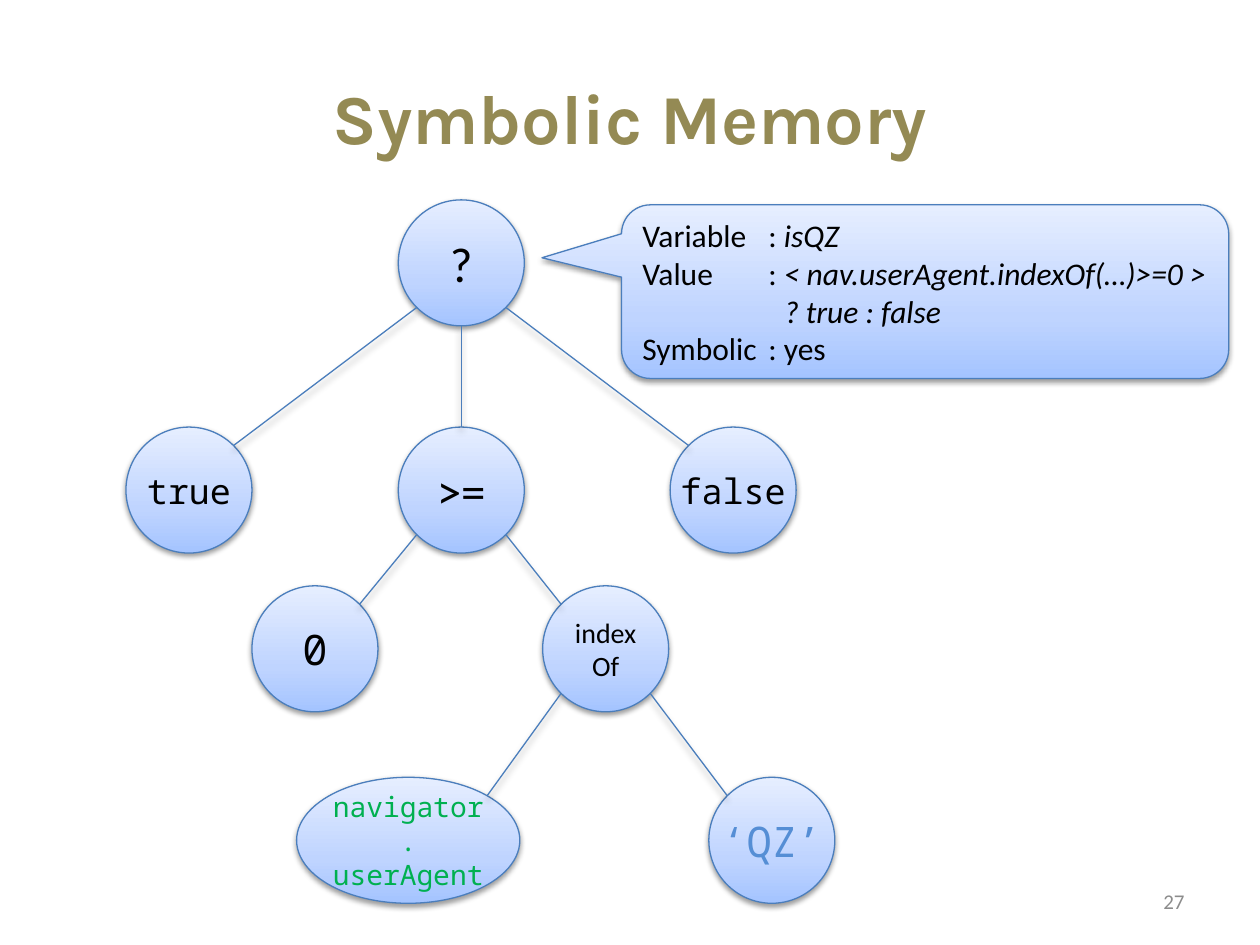
from copy import deepcopy
from lxml import etree
from pptx import Presentation
from pptx.dml.color import RGBColor
from pptx.enum.shapes import MSO_CONNECTOR, MSO_SHAPE as SHAPE
from pptx.enum.text import MSO_ANCHOR as ANCHOR, PP_ALIGN as ALIGN
from pptx.oxml.ns import qn
from pptx.util import Cm, Pt

SANS, MONO = "Calibri", "Noto Sans Mono"
LINE, BLACK = "4B7EBC", "000000"
GRADIENT = [(0, "A4C4FF"), (0.35, "BFD4FF"), (1, "E6EEFF")]
SIZE = 2.54  # node height, cm

# name: (text, centre x, centre y, width, font, size, colour, wrap)
NODES = {
    "cond": ("?", 9.3, 5.3, SIZE, SANS, 28, BLACK, True),
    "true": ("true", 3.81, 9.88, SIZE, MONO, 20, BLACK, False),
    "compare": (">=", 9.3, 9.88, SIZE, SANS, 28, BLACK, True),
    "false": ("false", 14.78, 9.88, SIZE, MONO, 20, BLACK, False),
    "zero": ("0", 6.35, 13.08, SIZE, MONO, 24, BLACK, True),
    "index": ("indexOf", 12.21, 13.08, SIZE, SANS, 16, BLACK, True),
    "agent": ("navigator.\nuserAgent", 8.23, 16.94, 4.5, MONO, 16, "00B050", True),
    "browser": ("‘QZ’", 15.56, 16.94, SIZE, MONO, 24, "558ED5", False),
}
CHILDREN = {
    "cond": ["true", "compare", "false"],
    "compare": ["zero", "index"],
    "index": ["agent", "browser"],
}
# each line: plain text, italic text
DETAILS = [
    ("Variable\t: ", "isQZ"),
    ("Value\t: ", "< nav.userAgent.indexOf(…)>=0 >"),
    ("", "? true : false"),
    ("Symbolic\t: yes", ""),
]


def rgb(value):
    return RGBColor.from_string(value)


def style(r, font, size, color, bold=None, italic=None):
    f = r.font
    f.name, f.size, f.bold, f.italic = font, Pt(size), bold, italic
    f.color.rgb = rgb(color)


def add_shadow(sp, blur, dist, alpha):
    sp_pr = sp._element.spPr
    effects = etree.SubElement(sp_pr, qn("a:effectLst"))
    shadow = etree.SubElement(effects, qn("a:outerShdw"), blurRad=str(Pt(blur)),
                              dist=str(Pt(dist)), dir="5400000", rotWithShape="0")
    color = etree.SubElement(shadow, qn("a:srgbClr"), val=BLACK)
    etree.SubElement(color, qn("a:alpha"), val=str(alpha * 1000))


def set_line(sp):
    sp.line.color.rgb = rgb(LINE)
    sp.line.width = Pt(0.75)


def add_box(kind, x, y, w, h):
    """Add a shape with the blue gradient, outline and shadow."""
    sp = s.shapes.add_shape(kind, Cm(x), Cm(y), Cm(w), Cm(h))
    sp.fill.gradient()
    sp.fill.gradient_angle = 90
    stops = sp._element.spPr.find(".//" + qn("a:gsLst"))
    stops.append(deepcopy(stops[0]))
    for stop, (pos, color) in zip(sp.fill.gradient_stops, GRADIENT):
        stop.position = pos
        stop.color.rgb = rgb(color)
    set_line(sp)
    add_shadow(sp, 3.1, 1.6, 38)
    sp.text_frame.vertical_anchor = ANCHOR.MIDDLE
    return sp


def add_node(text, cx, cy, w, font, size, color, wrap):
    sp = add_box(SHAPE.OVAL, cx - w / 2, cy - SIZE / 2, w, SIZE)
    tf = sp.text_frame
    tf.text, tf.word_wrap = text, wrap
    if w > SIZE:
        tf.margin_left = tf.margin_right = tf.margin_top = tf.margin_bottom = 0
    for p in tf.paragraphs:
        p.alignment = ALIGN.CENTER
        style(p.runs[0], font, size, color)


def add_edge(parent, child):
    """Join the diagonal points of two nodes, or bottom to top if aligned."""
    _, x1, y1, w1, *_ = NODES[parent]
    _, x2, y2, w2, *_ = NODES[child]
    side = (x2 > x1) - (x2 < x1)
    k = 0.5 ** 0.5 if side else 1
    drop = k * SIZE / 2
    line = s.shapes.add_connector(
        MSO_CONNECTOR.STRAIGHT,
        Cm(x1 + side * k * w1 / 2), Cm(y1 + drop),
        Cm(x2 - side * k * w2 / 2), Cm(y2 - drop))
    set_line(line)
    add_shadow(line, 4, 3, 40)


def add_callout():
    sp = add_box(SHAPE.ROUNDED_RECTANGULAR_CALLOUT, 12.53, 4.13, 12.24, 3.5)
    for i, value in enumerate((-0.631, -0.195, 0.167)):
        sp.adjustments[i] = value
    tf = sp.text_frame
    tf.text = "\n".join(plain for plain, _ in DETAILS)
    tf.word_wrap = False
    for p, (plain, italic) in zip(tf.paragraphs, DETAILS):
        p.alignment = ALIGN.LEFT
        if italic:
            p.add_run().text = italic
        for r in p.runs:
            style(r, SANS, 18, BLACK, italic=r.text == italic)
        p_pr = p._p.get_or_add_pPr()
        if plain:
            tabs = etree.SubElement(p_pr, qn("a:tabLst"))
            etree.SubElement(tabs, qn("a:tab"), pos=str(Cm(2.54)), algn="l")
        else:
            p_pr.set("marL", str(Cm(2.86)))
            p_pr.set("indent", "0")


prs = Presentation()
prs.slide_width, prs.slide_height = Cm(25.4), Cm(19.05)
s = prs.slides.add_slide(prs.slide_layouts[5])

title = s.shapes.title
title.left, title.top, title.width, title.height = Cm(1.27), Cm(0.76), Cm(22.86), Cm(3.18)
title.text_frame.text = "Symbolic Memory"
title.text_frame.vertical_anchor = ANCHOR.MIDDLE
title.text_frame.paragraphs[0].alignment = ALIGN.CENTER
style(title.text_frame.paragraphs[0].runs[0], "Karla", 40, "948A54", bold=True)

for node in NODES.values():
    add_node(*node)
for parent, children in CHILDREN.items():
    for child in children:
        add_edge(parent, child)
add_callout()

tf = s.shapes.add_textbox(Cm(18.21), Cm(17.65), Cm(5.92), Cm(1.02)).text_frame
tf.text, tf.word_wrap, tf.vertical_anchor = "27", True, ANCHOR.MIDDLE
tf.paragraphs[0].alignment = ALIGN.RIGHT
style(tf.paragraphs[0].runs[0], SANS, 12, "8C8C8C")

prs.save("out.pptx")
